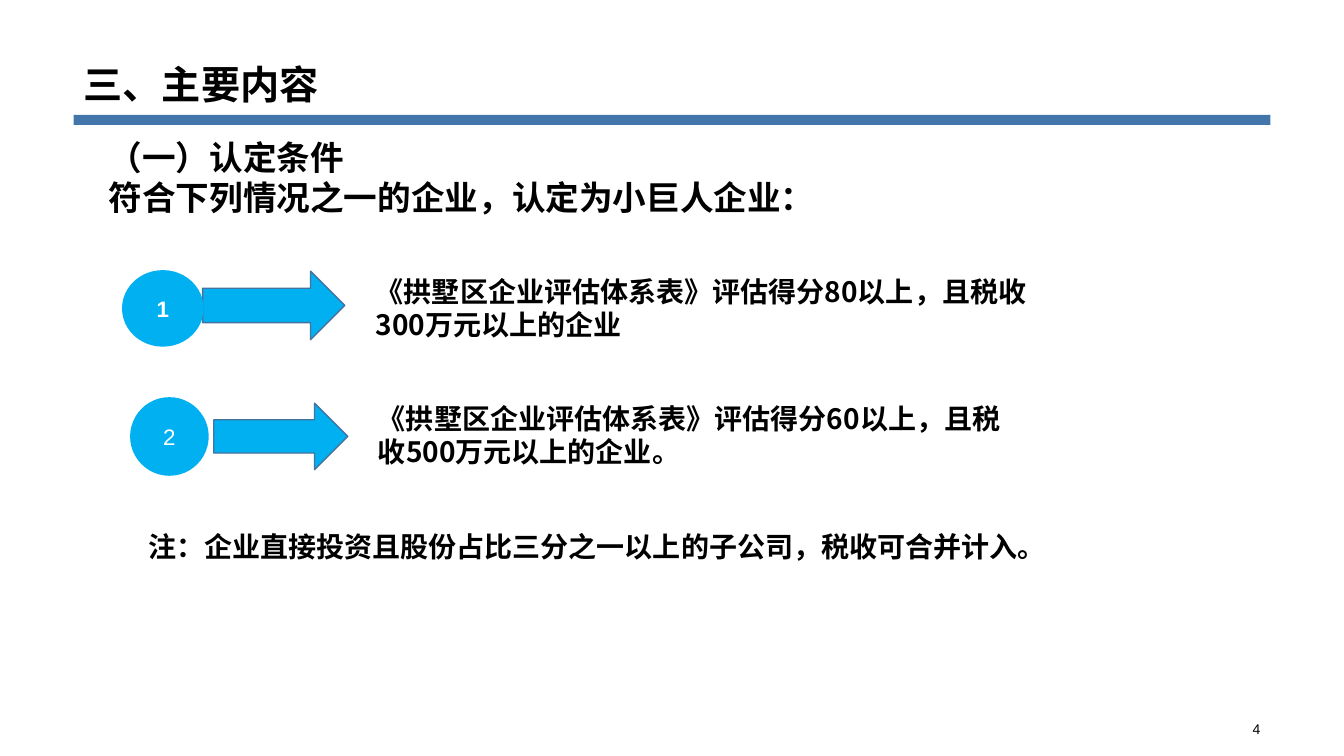
import pptx
import pptx.util
import pptx.dml.color
import pptx.enum.shapes
import pptx.enum.text
import pptx.oxml
import pptx.oxml.ns

Inches = pptx.util.Inches
RGBColor = pptx.dml.color.RGBColor
SHAPE = pptx.enum.shapes.MSO_SHAPE
ALIGN = pptx.enum.text.PP_ALIGN
ANCHOR = pptx.enum.text.MSO_ANCHOR

BLACK = RGBColor(0x00, 0x00, 0x00)
WHITE = RGBColor(0xFF, 0xFF, 0xFF)
BAR_BLUE = RGBColor(0x42, 0x76, 0xAA)
SKY_BLUE = RGBColor(0x00, 0xB0, 0xF0)
ARROW_EDGE = RGBColor(0x43, 0x73, 0x9E)
CHINESE_FONT = "Noto Sans CJK SC"


def write_text(shape, text, size=20, font="Arial", color=BLACK, bold=True,
               align=ALIGN.LEFT, anchor=ANCHOR.TOP, spacing=1.0, margin=None):
    frame = shape.text_frame
    frame.word_wrap = True
    frame.auto_size = pptx.enum.text.MSO_AUTO_SIZE.NONE
    frame.vertical_anchor = anchor
    if margin is not None:
        frame.margin_left = frame.margin_right = Inches(margin)
        frame.margin_top = frame.margin_bottom = Inches(margin)
    frame.text = text
    for paragraph in frame.paragraphs:
        paragraph.alignment = align
        paragraph.line_spacing = spacing
        for run in paragraph.runs:
            run.font.size = pptx.util.Pt(size)
            run.font.bold = bold
            run.font.color.rgb = color
            run.font.name = font
            east_asian = pptx.oxml.parse_xml(
                f'<a:ea {pptx.oxml.ns.nsdecls("a")} typeface="{CHINESE_FONT}"/>')
            run.font._element.find(pptx.oxml.ns.qn("a:latin")).addnext(east_asian)


def add_filled_shape(kind, box, fill, edge=None):
    shape = slide.shapes.add_shape(kind, *map(Inches, box))
    shape.shadow.inherit = False
    shape.fill.solid()
    shape.fill.fore_color.rgb = fill
    if edge is None:
        shape.line.fill.background()
    else:
        shape.line.color.rgb = edge
        shape.line.width = pptx.util.Pt(1)
    return shape


presentation = pptx.Presentation()
presentation.slide_width = Inches(13.33)
presentation.slide_height = Inches(7.5)
slide = presentation.slides.add_slide(presentation.slide_layouts[5])

# Title and the bar below it
title = slide.shapes.title
title.left, title.top, title.width, title.height = map(Inches, (0.73, 0, 11.87, 1.12))
write_text(title, "三、主要内容", size=28, anchor=ANCHOR.BOTTOM, spacing=0.9)
add_filled_shape(SHAPE.RECTANGLE, (0.73, 1.14, 11.87, 0.1), BAR_BLUE)

# Conditions: arrow, numbered circle and text
conditions = [
    ("1", True, (2.01, 2.69, 1.41, 0.68), (1.21, 2.68, 0.81, 0.76), (3.63, 2.67, 6.77, 0.77),
     "《拱墅区企业评估体系表》评估得分80以上，且税收300万元以上的企业"),
    ("2", False, (2.12, 4, 1.33, 0.66), (1.29, 3.94, 0.78, 0.78), (3.65, 3.93, 6.61, 0.77),
     "《拱墅区企业评估体系表》评估得分60以上，且税收500万元以上的企业。"),
]
for number, bold, arrow_box, circle_box, text_box, condition in conditions:
    add_filled_shape(SHAPE.RIGHT_ARROW, arrow_box, SKY_BLUE, ARROW_EDGE)
    circle = add_filled_shape(SHAPE.OVAL, circle_box, SKY_BLUE)
    write_text(circle, number, size=16, color=WHITE, bold=bold,
               align=ALIGN.CENTER, anchor=ANCHOR.MIDDLE, margin=0)
    condition_box = slide.shapes.add_textbox(*map(Inches, text_box))
    write_text(condition_box, condition, font=CHINESE_FONT)

# Heading, note and page number
heading = slide.shapes.add_textbox(*map(Inches, (0.98, 1.31, 8.93, 0.91)))
write_text(heading, "（一）认定条件\n符合下列情况之一的企业，认定为小巨人企业：", size=24)
note = slide.shapes.add_textbox(*map(Inches, (1.37, 5.2, 9.85, 0.44)))
write_text(note, "注：企业直接投资且股份占比三分之一以上的子公司，税收可合并计入。")
page_number = slide.shapes.add_textbox(*map(Inches, (9.42, 7.12, 3.18, 0.23)))
write_text(page_number, "4", size=10, bold=False, align=ALIGN.RIGHT, anchor=ANCHOR.MIDDLE)

presentation.save("out.pptx")
